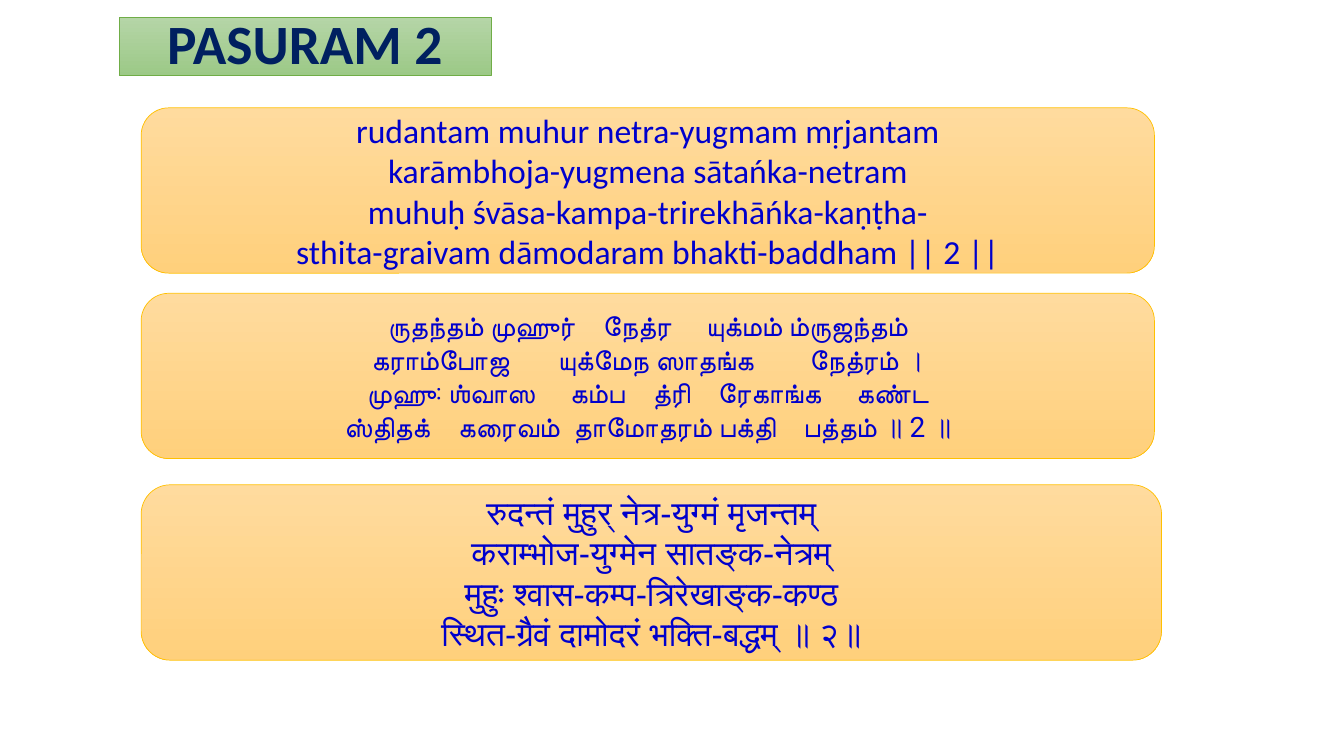
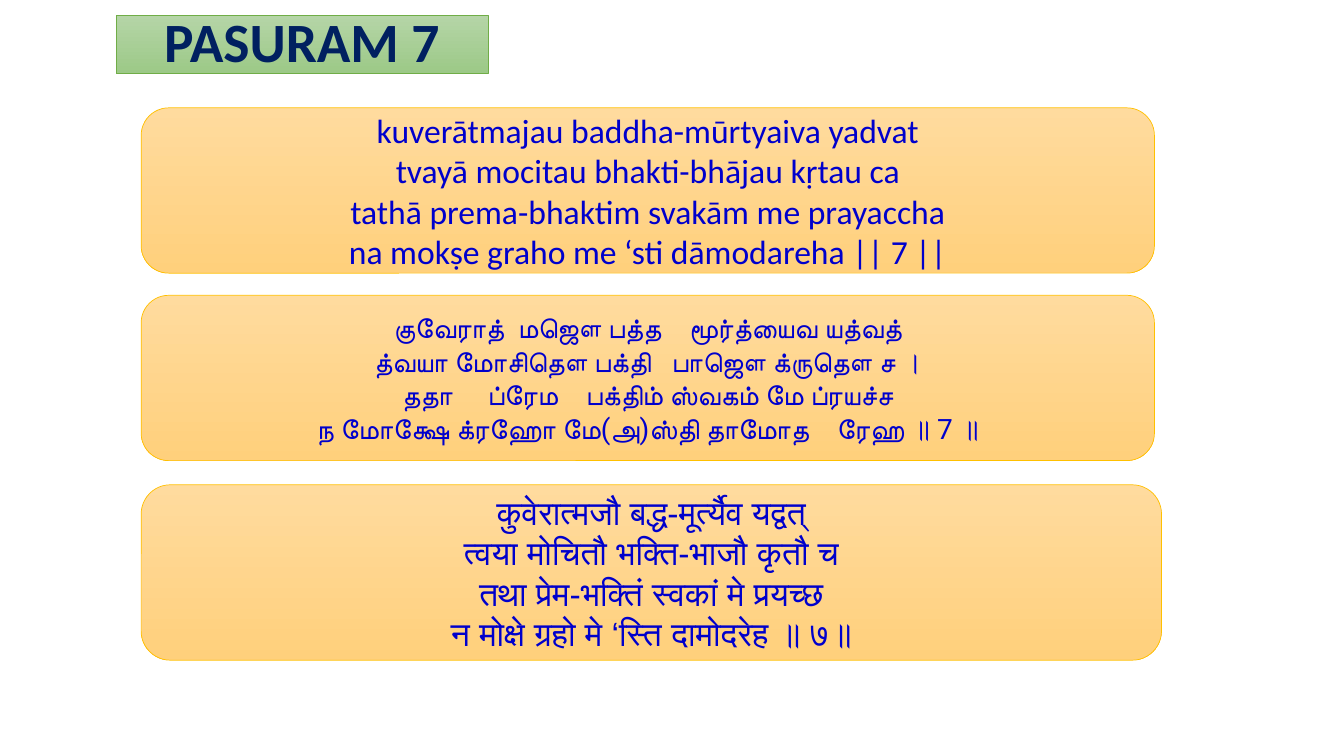
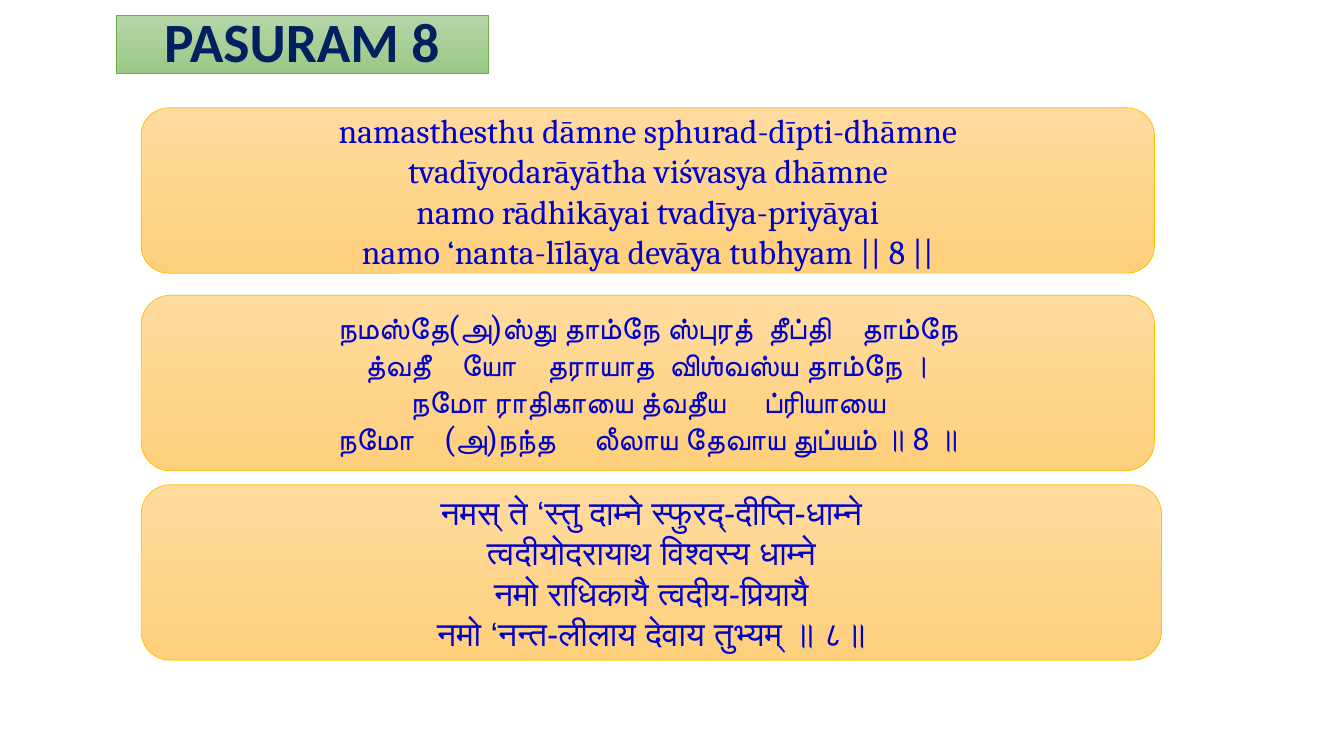
"""Build three verse slides, each with a title bar and three scripts of the verse."""
from lxml import etree
from pptx import Presentation
from pptx.dml.color import RGBColor
from pptx.enum.shapes import MSO_SHAPE as Shape
from pptx.enum.text import MSO_ANCHOR as Anchor, PP_ALIGN as Align
from pptx.oxml.ns import qn
from pptx.util import Inches, Pt

GREEN = ("B5D5A7", "9CC987", "70AD47")
AMBER = ("FFDB9E", "FFD07C", "FFC000")
NAVY, BLUE, OUTLINE = "002060", "0000CC", "4472C4"
GAP_MARK = "~"
SPACE_WIDTH = 0.25

VERSES = [
    {
        "title": "PASURAM 2", "title_at": (1.18, 0.17),
        "latin_font": "Calibri", "tamil_top": 2.91, "tamil_height": 1.64, "tamil_size": 20,
        "latin": [
            "rudantam muhur netra-yugmam mṛjantam",
            "karāmbhoja-yugmena sātańka-netram",
            "muhuḥ śvāsa-kampa-trirekhāńka-kaṇṭha-",
            "sthita-graivam dāmodaram bhakti-baddham || 2 ||",
        ],
        "tamil": [
            "ருதந்தம் முஹுர்~4~நேத்ர~5~யுக்மம் ம்ருஜந்தம்",
            "கராம்போஜ~7~யுக்மேந ஸாதங்க~8~நேத்ரம் ।",
            "முஹு꞉ ஶ்வாஸ~5~கம்ப~4~த்ரி~4~ரேகாங்க~5~கண்ட",
            "ஸ்திதக்~4~கரைவம்~2~தாமோதரம் பக்தி~4~பத்தம் ॥ 2 ॥",
        ],
        "devanagari": [
            "रुदन्तं मुहुर् नेत्र-युग्मं मृजन्तम्",
            "कराम्भोज-युग्मेन सातङ्क-नेत्रम्",
            "मुहुः श्वास-कम्प-त्रिरेखाङ्क-कण्ठ",
            "स्थित-ग्रैवं दामोदरं भक्ति-बद्धम् ॥ २॥",
        ],
    },
    {
        "title": "PASURAM 7", "title_at": (1.15, 0.15),
        "latin_font": "Calibri", "tamil_top": 2.93, "tamil_height": 1.64, "tamil_size": 20,
        "latin": [
            "kuverātmajau baddha-mūrtyaiva yadvat",
            "tvayā mocitau bhakti-bhājau kṛtau ca",
            "tathā prema-bhaktim svakām me prayaccha",
            "na mokṣe graho me ‘sti dāmodareha || 7 ||",
        ],
        "tamil": [
            "குவேராத்~2~மஜௌ பத்த~4~மூர்த்யைவ யத்வத்",
            "த்வயா மோசிதௌ பக்தி~3~பாஜௌ க்ருதௌ ச ।",
            "ததா~5~ப்ரேம~4~பக்திம் ஸ்வகம் மே ப்ரயச்ச",
            "ந மோக்ஷே க்ரஹோ மே(அ)ஸ்தி தாமோத~4~ரேஹ ॥ 7 ॥",
        ],
        "devanagari": [
            "कुवेरात्मजौ बद्ध-मूर्त्यैव यद्वत्",
            "त्वया मोचितौ भक्ति-भाजौ कृतौ च",
            "तथा प्रेम-भक्तिं स्वकां मे प्रयच्छ",
            "न मोक्षे ग्रहो मे ‘स्ति दामोदरेह ॥ ७॥",
        ],
    },
    {
        "title": "PASURAM 8", "title_at": (1.15, 0.15),
        "latin_font": "Cambria", "tamil_top": 2.93, "tamil_height": 1.74, "tamil_size": 22,
        "latin": [
            "namasthesthu dāmne sphurad-dīpti-dhāmne",
            "tvadīyodarāyātha viśvasya dhāmne",
            "namo rādhikāyai tvadīya-priyāyai",
            "namo ‘nanta-līlāya devāya tubhyam || 8 ||",
        ],
        "tamil": [
            "நமஸ்தே(அ)ஸ்து தாம்நே ஸ்புரத்~2~தீப்தி~4~தாம்நே",
            "த்வதீ~4~யோ~4~தராயாத~2~விஶ்வஸ்ய தாம்நே ।",
            "நமோ ராதிகாயை த்வதீய~5~ப்ரியாயை",
            "நமோ~4~(அ)நந்த~5~லீலாய தேவாய துப்யம் ॥ 8 ॥",
        ],
        "devanagari": [
            "नमस् ते ‘स्तु दाम्ने स्फुरद्-दीप्ति-धाम्ने",
            "त्वदीयोदरायाथ विश्वस्य धाम्ने",
            "नमो राधिकायै त्वदीय-प्रियायै",
            "नमो ‘नन्त-लीलाय देवाय तुभ्यम् ॥ ८॥",
        ],
    },
]


def color(value):
    return RGBColor.from_string(value)


def add_panel(slide, kind, box, colors):
    shape = slide.shapes.add_shape(kind, *map(Inches, box))
    shape.shadow.inherit = False
    shape.fill.gradient()
    shape.fill.gradient_angle = 270
    for stop, value in zip(shape.fill.gradient_stops, colors):
        stop.color.rgb = color(value)
    shape.line.color.rgb = color(colors[-1])
    shape.line.width = Pt(0.5)
    frame = shape.text_frame
    frame.word_wrap = True
    frame.vertical_anchor = Anchor.MIDDLE
    paragraph = frame.paragraphs[0]
    paragraph.alignment = Align.CENTER
    return paragraph


def add_run(paragraph, text, font, size, text_color):
    run = paragraph.add_run()
    run.text = text
    run.font.size = Pt(size)
    run.font.color.rgb = color(text_color)
    run.font.name = font
    properties = run.font._element
    etree.SubElement(properties, qn("a:cs"), typeface=font)
    return run, properties


def add_title(slide, text, position):
    paragraph = add_panel(slide, Shape.RECTANGLE, (*position, 3.69, 0.58), GREEN)
    paragraph.line_spacing = 0.9
    run, properties = add_run(paragraph, text, "Calibri", 39.6, NAVY)
    run.font.bold = True
    outline = etree.Element(qn("a:ln"), w=str(Pt(1)))
    fill = etree.SubElement(outline, qn("a:solidFill"))
    etree.SubElement(fill, qn("a:srgbClr"), val=OUTLINE)
    properties.insert(0, outline)


def add_verse(slide, lines, box, font, size):
    paragraph = add_panel(slide, Shape.ROUNDED_RECTANGLE, box, AMBER)
    for number, line in enumerate(lines):
        if number:
            paragraph.add_line_break()
        for index, part in enumerate(line.split(GAP_MARK)):
            is_gap = index % 2 == 1
            run, properties = add_run(paragraph, " " if is_gap else part, font, size, BLUE)
            if is_gap:
                extra = (int(part) - 1) * SPACE_WIDTH * size
                properties.set("spc", str(round(extra * 100)))


def main():
    presentation = Presentation()
    presentation.slide_width, presentation.slide_height = Inches(13.33), Inches(7.5)
    for verse in VERSES:
        slide = presentation.slides.add_slide(presentation.slide_layouts[6])
        add_title(slide, verse["title"], verse["title_at"])
        add_verse(slide, verse["latin"], (1.4, 1.07, 10.05, 1.64), verse["latin_font"], 24)
        tamil_box = (1.4, verse["tamil_top"], 10.05, verse["tamil_height"])
        add_verse(slide, verse["tamil"], tamil_box, "Roboto", verse["tamil_size"])
        add_verse(slide, verse["devanagari"], (1.4, 4.81, 10.12, 1.74), "Arial", 24)
    presentation.save("out.pptx")


if __name__ == "__main__":
    main()
